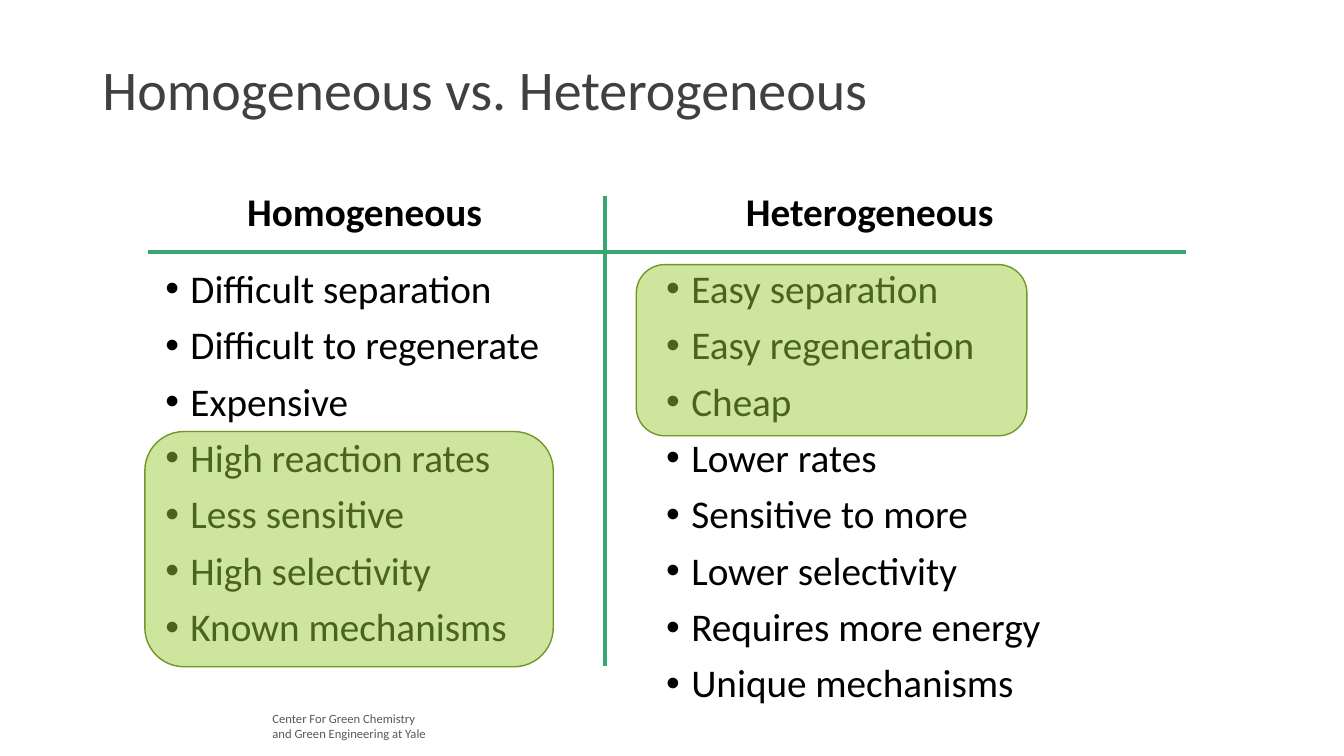
"""Build a slide comparing homogeneous and heterogeneous catalysts."""
from lxml import etree
from pptx import Presentation, util as u
from pptx.dml.color import RGBColor
from pptx.enum import shapes, text
from pptx.oxml.ns import qn

EMU_PER_PX = 9525
FONT = "Calibri"
BLACK = RGBColor(0x00, 0x00, 0x00)
TITLE_GRAY = RGBColor(0x40, 0x40, 0x40)
FOOTER_GRAY = RGBColor(0x59, 0x59, 0x59)
RULE_GREEN = RGBColor(0x37, 0xA7, 0x6F)
HIGHLIGHT_FILL = RGBColor(0x99, 0xCB, 0x38)
HIGHLIGHT_LINE = RGBColor(0x71, 0x96, 0x29)

HOMOGENEOUS = [
    "Difficult separation", "Difficult to regenerate", "Expensive",
    "High reaction rates", "Less sensitive", "High selectivity",
    "Known mechanisms",
]
HETEROGENEOUS = [
    "Easy separation", "Easy regeneration", "Cheap", "Lower rates",
    "Sensitive to more", "Lower selectivity", "Requires more energy",
    "Unique mechanisms",
]


def px(*lengths):
    return [u.Emu(length * EMU_PER_PX) for length in lengths]


def format_runs(text_frame, size, color, bold=False):
    for paragraph in text_frame.paragraphs:
        for run in paragraph.runs:
            run.font.name = FONT
            run.font.size = u.Pt(size)
            run.font.bold = bold
            run.font.color.rgb = color


def set_title(slide, title, box):
    placeholder = slide.shapes.title
    placeholder.left, placeholder.top, placeholder.width, placeholder.height = px(*box)
    text_frame = placeholder.text_frame
    text_frame.text = title
    text_frame.vertical_anchor = text.MSO_ANCHOR.MIDDLE
    text_frame.auto_size = text.MSO_AUTO_SIZE.NONE
    paragraph = text_frame.paragraphs[0]
    paragraph.alignment = text.PP_ALIGN.LEFT
    paragraph.line_spacing = 0.9
    format_runs(text_frame, 40, TITLE_GRAY)


def add_text(slide, lines, box, size, color=BLACK, bold=False, wrap=True):
    text_frame = slide.shapes.add_textbox(*px(*box)).text_frame
    text_frame.word_wrap = wrap
    text_frame.text = "\n".join(lines)
    format_runs(text_frame, size, color, bold)
    return text_frame


def add_bullets(slide, items, box):
    text_frame = add_text(slide, items, box, 28)
    for index, paragraph in enumerate(text_frame.paragraphs):
        properties = paragraph._p.get_or_add_pPr()
        properties.set("marL", str(u.Inches(0.25)))
        properties.set("indent", str(-u.Inches(0.25)))
        etree.SubElement(properties, qn("a:buFont")).set("typeface", "Arial")
        etree.SubElement(properties, qn("a:buChar")).set("char", "•")
        paragraph.line_spacing = 0.9
        paragraph.space_before = u.Pt(10 if index else 0)


def add_rule(slide, *ends):
    rule = slide.shapes.add_connector(shapes.MSO_CONNECTOR.STRAIGHT, *px(*ends))
    rule.line.color.rgb = RULE_GREEN
    rule.line.width = u.Pt(3)
    etree.SubElement(rule._element.spPr, qn("a:effectLst"))


def add_highlight(slide, box):
    shape = slide.shapes.add_shape(shapes.MSO_SHAPE.ROUNDED_RECTANGLE, *px(*box))
    shape.shadow.inherit = False
    shape.fill.solid()
    shape.fill.fore_color.rgb = HIGHLIGHT_FILL
    color = shape._element.spPr.find(qn("a:solidFill"))[0]
    etree.SubElement(color, qn("a:alpha")).set("val", "49000")
    shape.line.color.rgb = HIGHLIGHT_LINE
    shape.line.width = u.Pt(1)


def main():
    presentation = Presentation()
    presentation.slide_width, presentation.slide_height = px(1280, 720)
    slide = presentation.slides.add_slide(presentation.slide_layouts[5])

    set_title(slide, "Homogeneous vs. Heterogeneous", (88, 18, 1104, 139))
    footer = ["Center For Green Chemistry", "and Green Engineering at Yale"]
    add_text(slide, footer, (250, 672, 179, 38), 9, FOOTER_GRAY)

    add_bullets(slide, HOMOGENEOUS, (148, 252, 401, 422))
    add_rule(slide, 141, 240, 1130, 240)
    add_rule(slide, 576, 187, 576, 634)
    add_text(slide, ["Homogeneous"], (226, 174, 245, 55), 28, bold=True, wrap=False)
    add_text(slide, ["Heterogeneous"], (701, 174, 258, 55), 28, bold=True, wrap=False)
    add_bullets(slide, HETEROGENEOUS, (625, 252, 505, 441))

    add_highlight(slide, (606, 252, 372, 163))
    add_highlight(slide, (138, 411, 389, 224))
    presentation.save("out.pptx")


if __name__ == "__main__":
    main()
